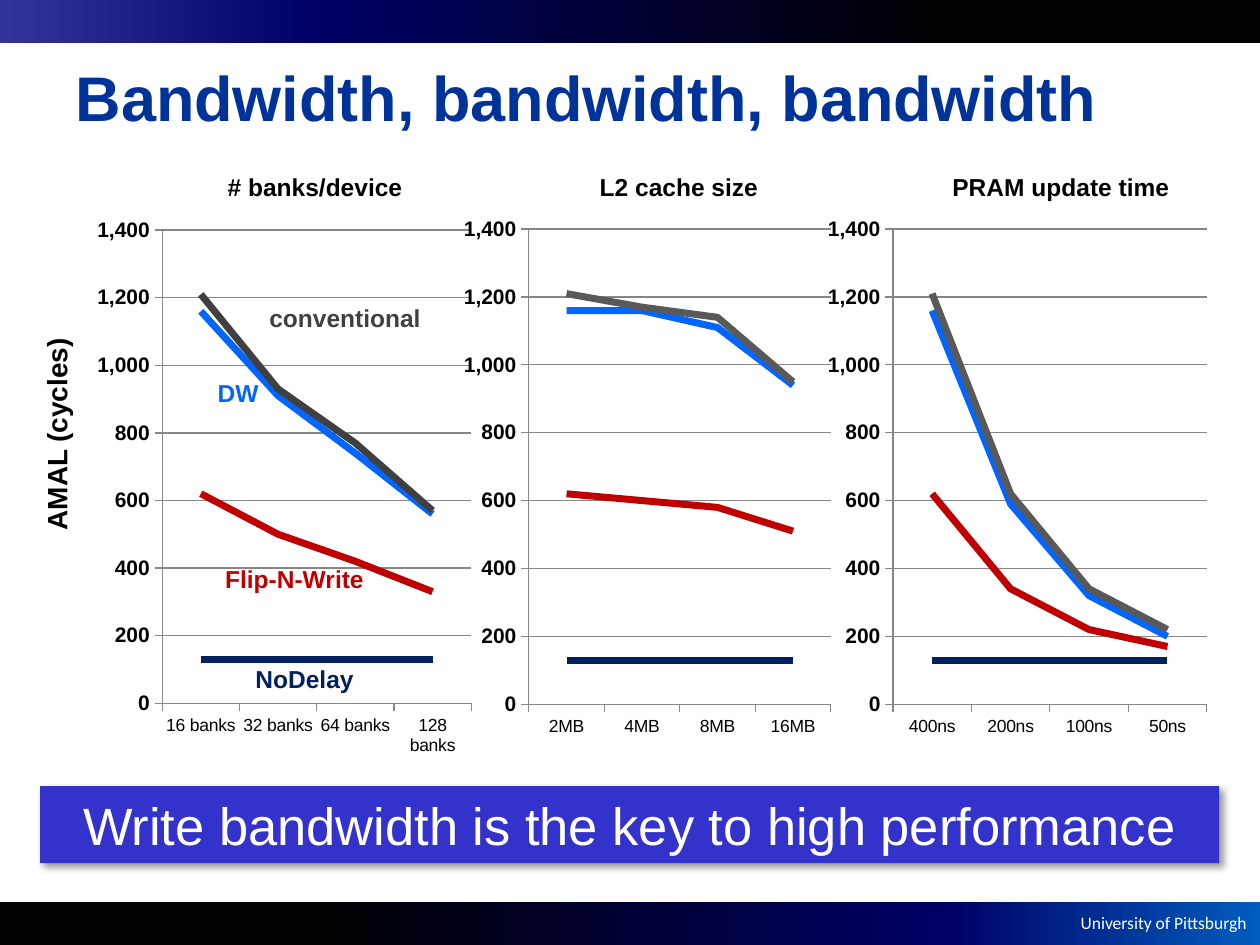
from lxml import etree
from pptx import Presentation
from pptx.chart.data import CategoryChartData
from pptx.dml.color import RGBColor
from pptx.enum.chart import XL_CHART_TYPE as CT, XL_TICK_MARK as TM
from pptx.enum.shapes import MSO_SHAPE
from pptx.enum.text import MSO_ANCHOR, MSO_AUTO_SIZE, PP_ALIGN
from pptx.oxml import parse_xml
from pptx.oxml.ns import nsdecls, qn
from pptx.util import Cm, Pt


def rgb(hex_str):
    return RGBColor.from_string(hex_str)


def write(sp, text, size, color, bold=False, align=PP_ALIGN.LEFT, wrap=False, name="Arial"):
    tf = sp.text_frame
    tf.word_wrap = wrap
    p = tf.paragraphs[0]
    p.alignment = align
    r = p.add_run()
    r.text = text
    for key, val in {"size": Pt(size), "bold": bold, "name": name}.items():
        setattr(r.font, key, val)
    r.font.color.rgb = rgb(color)


prs = Presentation()
prs.slide_width, prs.slide_height = Cm(25.4), Cm(19.05)
s = prs.slides.add_slide(prs.slide_layouts[5])

# Gradient bars at the bottom and top edges
bars = [
    (18.19, [(0, "000000"), (25, "000000"), (75, "000066"), (100, "005CBF")]),
    (0, [(0, "333399"), (25, "000066"), (75, "000000"), (100, "000000")]),
]
for top, stops in bars:
    sp = s.shapes.add_shape(MSO_SHAPE.RECTANGLE, 0, Cm(top), prs.slide_width, Cm(0.86))
    sp.shadow.inherit = False
    sp.line.fill.background()
    sp.fill.gradient()
    sp.fill.gradient_angle = 0
    gs_list = sp._element.spPr.find(".//" + qn("a:gsLst"))
    for gs in list(gs_list):
        gs_list.remove(gs)
    for pos, color in stops:
        gs = etree.SubElement(gs_list, qn("a:gs"), pos=str(pos * 1000))
        etree.SubElement(gs, qn("a:srgbClr"), val=color)

# Title
title = s.shapes.title
title.left, title.top, title.width, title.height = Cm(1.27), Cm(0.36), Cm(22.86), Cm(3.18)
title.text_frame.vertical_anchor = MSO_ANCHOR.MIDDLE
write(title, "Bandwidth, bandwidth, bandwidth", 36, "003399", True, wrap=True)

# Line charts: frame (left, top, width, height), plot area on the slide, data
names = ["DW", "conventional", "Flip-N-Write", "NoDelay"]
no_delay = [130] * 4
charts = [
    ((1.8, 4.19, 7.85, 11.28), (3.27, 4.64, 6.23, 9.54), "404040",
     ["16 banks", "32 banks", "64 banks", "128 banks"],
     [[1160, 910, 740, 560], [1210, 930, 770, 570], [620, 500, 420, 330], no_delay]),
    ((16.54, 4.19, 7.95, 10.87), (18, 4.62, 6.33, 9.58), "595959",
     ["400ns", "200ns", "100ns", "50ns"],
     [[1160, 590, 320, 200], [1210, 620, 340, 220], [620, 340, 220, 170], no_delay]),
    ((9.22, 4.19, 7.7, 10.87), (10.66, 4.62, 6.09, 9.58), "595959",
     ["2MB", "4MB", "8MB", "16MB"],
     [[1160, 1160, 1110, 940], [1210, 1170, 1140, 950], [620, 600, 580, 510], no_delay]),
]
for frame, plot, gray, cats, rows in charts:
    data = CategoryChartData(number_format="General")
    data.categories = cats
    for name, row in zip(names, rows):
        data.add_series(name, row)
    chart = s.shapes.add_chart(CT.LINE, *[Cm(v) for v in frame], data).chart
    chart.has_legend = chart.has_title = False
    chart.font.size, chart.font.name = Pt(10), "Arial"
    chart.font.color.rgb = rgb("000000")
    chart.plots[0].vary_by_categories = False

    for ser, color in zip(chart.plots[0].series, ["0066FF", gray, "C00000", "002060"]):
        ser.smooth = False
        ser.format.line.color.rgb = rgb(color)
        ser.format.line.width = Pt(4)

    cat_ax, val_ax = chart.category_axis, chart.value_axis
    for ax in (cat_ax, val_ax):
        ax.major_tick_mark, ax.minor_tick_mark = TM.OUTSIDE, TM.NONE
        ax.format.line.color.rgb = rgb("868686")
    val_ax.major_gridlines.format.line.color.rgb = rgb("868686")
    for key, val in {"minimum_scale": 0, "maximum_scale": 1400, "major_unit": 200}.items():
        setattr(val_ax, key, val)
    for key, val in {"number_format": "#,##0", "number_format_is_linked": False}.items():
        setattr(val_ax.tick_labels, key, val)
    for key, val in {"size": Pt(12), "bold": True, "name": "Arial"}.items():
        setattr(val_ax.tick_labels.font, key, val)

    # Fix the inner plot area as fractions of the frame
    left, top, width, height = frame
    x, y, w, h = plot
    layout = {"x": (x - left) / width, "y": (y - top) / height, "w": w / width, "h": h / height}
    modes = '<c:layoutTarget val="inner"/><c:xMode val="edge"/><c:yMode val="edge"/>'
    sizes = "".join(f'<c:{k} val="{v:.4f}"/>' for k, v in layout.items())
    area = chart._chartSpace.chart.plotArea
    for old in area.findall(qn("c:layout")):
        area.remove(old)
    area.insert(0, parse_xml(f'<c:layout {nsdecls("c")}><c:manualLayout>{modes}{sizes}'
                             '</c:manualLayout></c:layout>'))

# Axis title, line labels and chart headings
labels = [
    ("AMAL (cycles)", -1.07, 8.26, 4.42, 0.94, 16, "000000", 270),
    ("conventional", 5.18, 5.99, 3.58, 0.86, 14, "404040", 0),
    ("DW", 4.14, 7.49, 1.35, 0.86, 14, "0066FF", 0),
    ("Flip-N-Write", 4.29, 11.25, 3.33, 0.86, 14, "C00000", 0),
    ("NoDelay", 4.9, 13.26, 2.51, 0.86, 14, "002060", 0),
    ("# banks/device", 4.34, 3.35, 4.04, 0.86, 14, "000000", 0),
    ("L2 cache size", 11.84, 3.35, 3.71, 0.86, 14, "000000", 0),
    ("PRAM update time", 18.95, 3.35, 4.9, 0.86, 14, "000000", 0),
]
for text, left, top, width, height, size, color, angle in labels:
    sp = s.shapes.add_textbox(Cm(left), Cm(top), Cm(width), Cm(height))
    sp.rotation = angle
    write(sp, text, size, color, True)
    sp.text_frame.auto_size = MSO_AUTO_SIZE.SHAPE_TO_FIT_TEXT

# Conclusion banner with a soft shadow
sp = s.shapes.add_shape(MSO_SHAPE.RECTANGLE, Cm(0.81), Cm(15.85), Cm(23.77), Cm(1.55))
sp.fill.solid()
sp.fill.fore_color.rgb = rgb("3333CC")
sp.line.fill.background()
sp.shadow.inherit = False
effects = sp._element.spPr.find(qn("a:effectLst"))
shadow = etree.SubElement(effects, qn("a:outerShdw"), blurRad=str(Pt(4)), dist=str(Pt(3)),
                          dir="2700000", algn="tl", rotWithShape="0")
black = etree.SubElement(shadow, qn("a:srgbClr"), val="000000")
etree.SubElement(black, qn("a:alpha"), val="40000")
write(sp, "Write bandwidth is the key to high performance", 30, "FFFFFF",
      align=PP_ALIGN.CENTER, wrap=True)

# Footer
sp = s.shapes.add_textbox(Cm(21.16), Cm(18.26), Cm(4.22), Cm(0.69))
write(sp, "University of Pittsburgh", 10, "FFFFFF", align=PP_ALIGN.RIGHT, name="Calibri")

prs.save("out.pptx")
